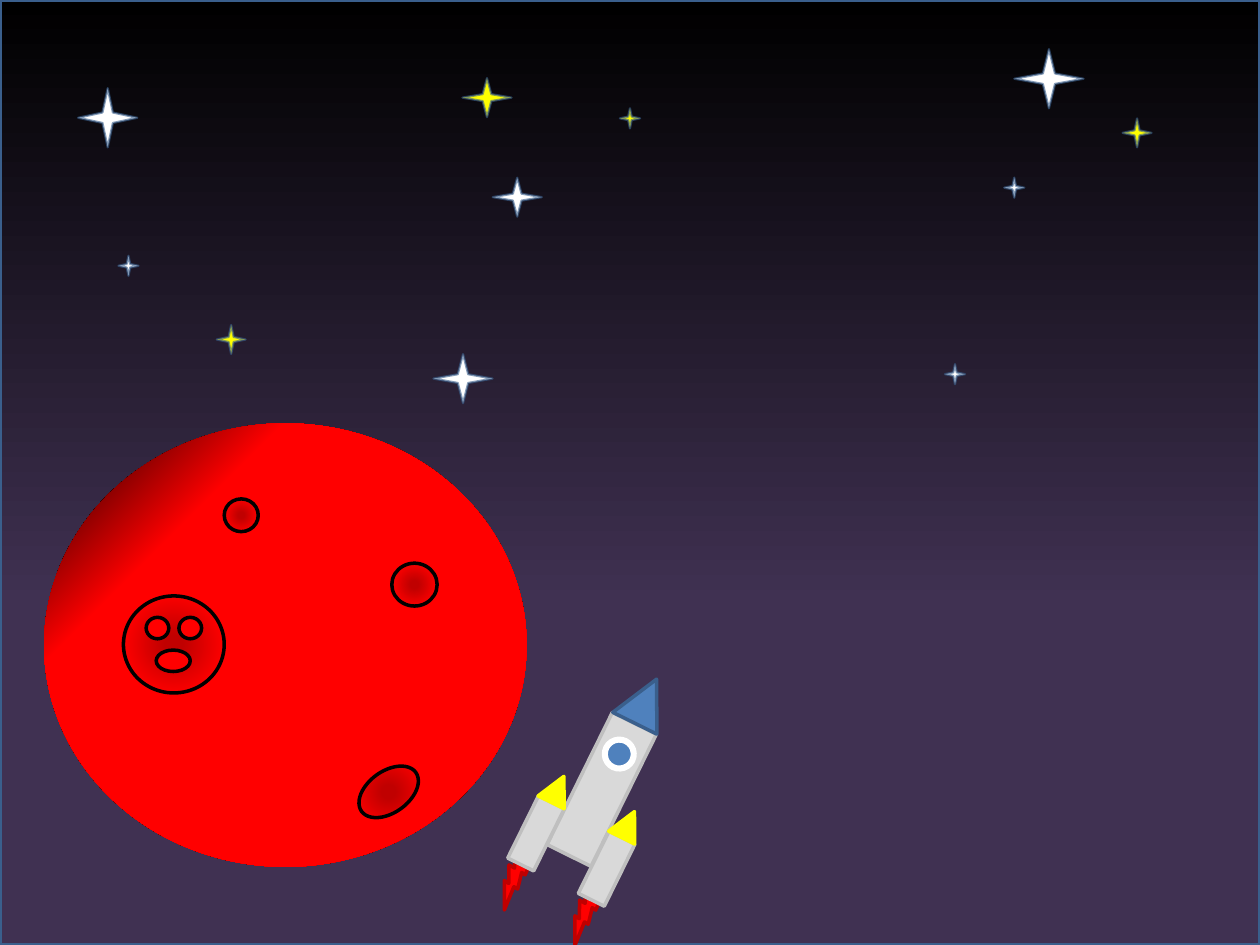
from pptx import Presentation
from pptx.dml.color import RGBColor
from pptx.enum.shapes import MSO_SHAPE
from pptx.oxml import parse_xml
from pptx.oxml.ns import nsdecls, qn
from pptx.util import Inches, Pt
from lxml.etree import SubElement

WHITE = RGBColor(0xFF, 0xFF, 0xFF)
BLACK = RGBColor(0x00, 0x00, 0x00)
YELLOW = RGBColor(0xFF, 0xFF, 0x00)
RED = RGBColor(0xFF, 0x00, 0x00)
DARK_RED = RGBColor(0xC0, 0x00, 0x00)
BLUE = RGBColor(0x4F, 0x81, 0xBD)
DARK_BLUE = RGBColor(0x3A, 0x5F, 0x8C)
PURPLE = RGBColor(0x40, 0x31, 0x52)
LIGHT_GREY = RGBColor(0xD9, 0xD9, 0xD9)
GREY = RGBColor(0xBF, 0xBF, 0xBF)

SKY_STOPS = [(0, PURPLE), (36, PURPLE), (100, BLACK)]
PLANET_STOPS = [(74, RED), (100, BLACK)]
CRATER_STOPS = [(12, DARK_RED), (74, RED), (100, BLACK)]
UPWARD = '<a:lin ang="16200000" scaled="0"/>'
RADIAL = '<a:path path="circle"><a:fillToRect l="{}" t="{}" r="{}" b="{}"/></a:path>'
FROM_CORNER = RADIAL.format(100000, 100000, 0, 0)
FROM_CENTRE = RADIAL.format(50000, 50000, 50000, 50000)

STARS = [
    ((0.62, 0.7, 0.47, 0.47), WHITE),
    ((3.44, 2.81, 0.47, 0.39), WHITE),
    ((1.72, 2.58, 0.23, 0.23), YELLOW),
    ((0.94, 2.03, 0.16, 0.16), WHITE),
    ((3.91, 1.41, 0.39, 0.31), WHITE),
    ((8.05, 0.39, 0.55, 0.47), WHITE),
    ((7.97, 1.41, 0.16, 0.16), WHITE),
    ((7.5, 2.89, 0.16, 0.16), WHITE),
    ((3.67, 0.62, 0.39, 0.31), YELLOW),
    ((4.92, 0.86, 0.16, 0.16), YELLOW),
    ((8.91, 0.94, 0.23, 0.23), YELLOW),
]

ROCKET_TILT = 26.3
FLAME_TILT = 58.1
SINGLE = [(0, 0)]
BOOSTERS = [(0, 0), (0.56, 0.28)]
ROCKET_PARTS = [
    (MSO_SHAPE.LIGHTNING_BOLT, (3.89, 6.76, 0.37, 0.4), FLAME_TILT, RED, DARK_RED, 2, BOOSTERS),
    (MSO_SHAPE.RECTANGLE, (4.58, 5.68, 0.39, 1.17), ROCKET_TILT, LIGHT_GREY, GREY, 2, SINGLE),
    (MSO_SHAPE.RECTANGLE, (4.14, 6.34, 0.23, 0.55), ROCKET_TILT, LIGHT_GREY, GREY, 2, BOOSTERS),
    (MSO_SHAPE.ISOSCELES_TRIANGLE, (4.31, 6.15, 0.23, 0.23), ROCKET_TILT, YELLOW, YELLOW, 2, BOOSTERS),
    (MSO_SHAPE.OVAL, (4.8, 5.87, 0.23, 0.23), ROCKET_TILT, BLUE, WHITE, 3.5, SINGLE),
    (MSO_SHAPE.ISOSCELES_TRIANGLE, (4.93, 5.37, 0.39, 0.39), ROCKET_TILT, BLUE, DARK_BLUE, 2, SINGLE),
]

PLANET = (0.35, 3.36, 3.83, 3.52)
BIG_CRATER = (0.98, 4.73, 0.8, 0.77)
FACE = [(1.16, 4.9, 0.18, 0.17), (1.42, 4.9, 0.18, 0.17), (1.24, 5.16, 0.27, 0.17)]
SMALL_CRATERS = [
    ((1.78, 3.96, 0.27, 0.26), 0),
    ((3.11, 4.47, 0.36, 0.34), 0),
    ((2.82, 6.12, 0.53, 0.33), 324.3),
]


def add_figure(shapes, kind, box, fill=None, line=None, width=2, rotation=0):
    shape = shapes.add_shape(kind, *map(Inches, box))
    shape.shadow.inherit = False
    shape.rotation = rotation
    if fill is None:
        shape.fill.background()
    else:
        shape.fill.solid()
        shape.fill.fore_color.rgb = fill
    if line is None:
        shape.line.fill.background()
    else:
        shape.line.color.rgb = line
        shape.line.width = Pt(width)
    return shape


def set_gradient(shape, stops, direction):
    stop_xml = "".join(
        f'<a:gs pos="{position * 1000}"><a:srgbClr val="{color}"/></a:gs>'
        for position, color in stops
    )
    gradient = parse_xml(
        f'<a:gradFill {nsdecls("a")} rotWithShape="1">'
        f"<a:gsLst>{stop_xml}</a:gsLst>{direction}</a:gradFill>"
    )
    properties = shape._element.spPr
    properties.replace(properties.find(qn("a:noFill")), gradient)


def set_line_opacity(shape, percent):
    color = shape.line._ln.find(".//" + qn("a:srgbClr"))
    SubElement(color, qn("a:alpha")).set("val", str(percent * 1000))


def add_stars(shapes):
    for box, color in STARS:
        star = add_figure(shapes, MSO_SHAPE.STAR_4_POINT, box, color, DARK_BLUE, 1.25)
        star.adjustments[0] = 0.125
        set_line_opacity(star, 62)


def add_rocket(shapes):
    for kind, (left, top, wide, high), tilt, fill, line, width, offsets in ROCKET_PARTS:
        for across, down in offsets:
            box = (left + across, top + down, wide, high)
            add_figure(shapes, kind, box, fill, line, width, tilt)


def add_crater(shapes, box, tilt=0):
    crater = add_figure(shapes, MSO_SHAPE.OVAL, box, line=BLACK, rotation=tilt)
    set_gradient(crater, CRATER_STOPS, FROM_CENTRE)


def add_planet(shapes):
    planet = add_figure(shapes, MSO_SHAPE.OVAL, PLANET)
    set_gradient(planet, PLANET_STOPS, FROM_CORNER)
    add_crater(shapes, BIG_CRATER)
    for box in FACE:
        add_figure(shapes, MSO_SHAPE.OVAL, box, RED, BLACK)
    for box, tilt in SMALL_CRATERS:
        add_crater(shapes, box, tilt)


def main():
    presentation = Presentation()
    presentation.slide_width = Inches(10)
    presentation.slide_height = Inches(7.5)
    slide = presentation.slides.add_slide(presentation.slide_layouts[6])
    sky = add_figure(slide.shapes, MSO_SHAPE.RECTANGLE, (0, 0, 10, 7.5), line=DARK_BLUE)
    set_gradient(sky, SKY_STOPS, UPWARD)
    for add_parts in (add_stars, add_rocket, add_planet):
        add_parts(slide.shapes.add_group_shape().shapes)
    presentation.save("out.pptx")


if __name__ == "__main__":
    main()
